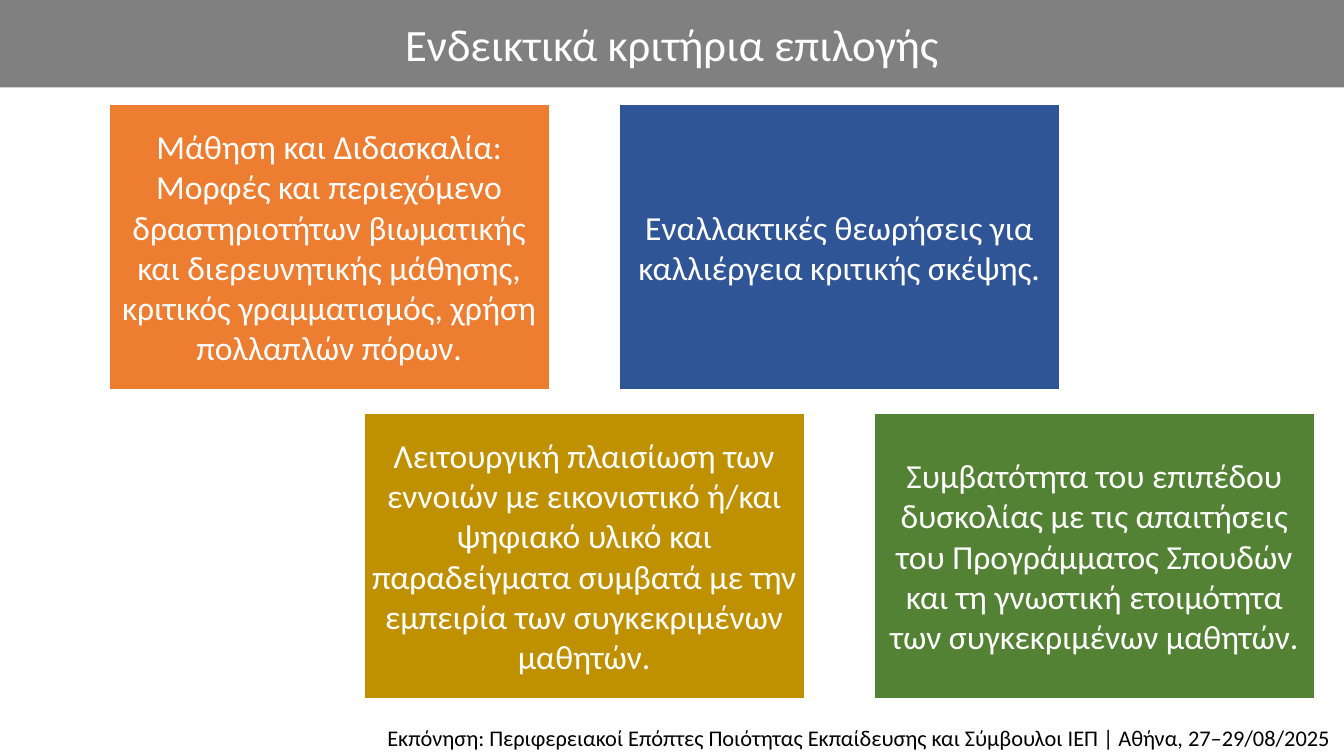
from pptx import Presentation
from pptx.dml.color import RGBColor
from pptx.enum.shapes import MSO_SHAPE
from pptx.enum.text import MSO_ANCHOR, PP_ALIGN
from pptx.util import Pt

# Content
TITLE = "Ενδεικτικά κριτήρια επιλογής"
FOOTER = ("Εκπόνηση: Περιφερειακοί Επόπτες Ποιότητας Εκπαίδευσης και "
          "Σύμβουλοι ΙΕΠ | Αθήνα, 27–29/08/2025")
# Each criterion: column, row, fill, text
CRITERIA = [
    (0, 0, "ED7D31", "Μάθηση και Διδασκαλία: Μορφές και περιεχόμενο "
     "δραστηριοτήτων βιωματικής και διερευνητικής μάθησης, κριτικός "
     "γραμματισμός, χρήση πολλαπλών πόρων."),
    (2, 0, "2F5597", "Εναλλακτικές θεωρήσεις για καλλιέργεια κριτικής σκέψης."),
    (1, 1, "BF9000", "Λειτουργική πλαισίωση των εννοιών με εικονιστικό ή/και "
     "ψηφιακό υλικό και παραδείγματα συμβατά με την εμπειρία των "
     "συγκεκριμένων μαθητών."),
    (3, 1, "548235", "Συμβατότητα του επιπέδου δυσκολίας με τις απαιτήσεις του "
     "Προγράμματος Σπουδών και τη γνωστική ετοιμότητα των συγκεκριμένων "
     "μαθητών."),
]

# Layout in points
SLIDE_WIDTH, SLIDE_HEIGHT = 960, 540
BOX_LEFT, BOX_TOP = 77.8, 74.2
BOX_WIDTH, BOX_HEIGHT = 314.6, 204
COLUMN_STEP, ROW_STEP = 182.2, 220.7
BOX_INSET = 5

# Formats
CENTRED = {"alignment": PP_ALIGN.CENTER, "space_before": Pt(6), "space_after": Pt(6)}
FOOTER_PARAGRAPH = {"alignment": PP_ALIGN.RIGHT, "line_spacing": 1.1}
BOX_FRAME = {"vertical_anchor": MSO_ANCHOR.MIDDLE}
for side in ("left", "right", "top", "bottom"):
    BOX_FRAME[f"margin_{side}"] = Pt(BOX_INSET)


def color(value):
    return RGBColor.from_string(value)


def apply_format(target, values):
    for name, value in values.items():
        setattr(target, name, value)


def add_panel(slide, bounds, fill, text, size, text_color, frame_format,
              paragraph_format, outline=None):
    """Add a filled rectangle with one paragraph of text."""
    shape = slide.shapes.add_shape(MSO_SHAPE.RECTANGLE, *map(Pt, bounds))
    shape.shadow.inherit = False
    shape.fill.solid()
    shape.fill.fore_color.rgb = color(fill)
    if outline:
        shape.line.color.rgb = color(outline)
        shape.line.width = Pt(1)
    else:
        shape.line.fill.background()
    frame = shape.text_frame
    apply_format(frame, {"word_wrap": True, **frame_format})
    paragraph = frame.paragraphs[0]
    apply_format(paragraph, paragraph_format)
    run = paragraph.add_run()
    run.text = text
    apply_format(run.font, {"name": "Calibri", "size": Pt(size)})
    run.font.color.rgb = color(text_color)


def main():
    presentation = Presentation()
    presentation.slide_width = Pt(SLIDE_WIDTH)
    presentation.slide_height = Pt(SLIDE_HEIGHT)
    slide = presentation.slides.add_slide(presentation.slide_layouts[6])

    # Title band
    add_panel(slide, (0, 0, SLIDE_WIDTH, 62.5), "808080", TITLE, 32, "FFFFFF",
              {"vertical_anchor": MSO_ANCHOR.MIDDLE}, CENTRED)

    # Staggered criteria boxes
    for column, row, fill, text in CRITERIA:
        bounds = (BOX_LEFT + column * COLUMN_STEP, BOX_TOP + row * ROW_STEP,
                  BOX_WIDTH, BOX_HEIGHT)
        add_panel(slide, bounds, fill, text, 24, "FFFFFF", BOX_FRAME, CENTRED,
                  outline="FFFFFF")

    # Footer
    add_panel(slide, (2, 512, 955.5, 28), "FFFFFF", FOOTER, 16, "000000",
              {"vertical_anchor": MSO_ANCHOR.TOP}, FOOTER_PARAGRAPH)

    presentation.save("out.pptx")


if __name__ == "__main__":
    main()
